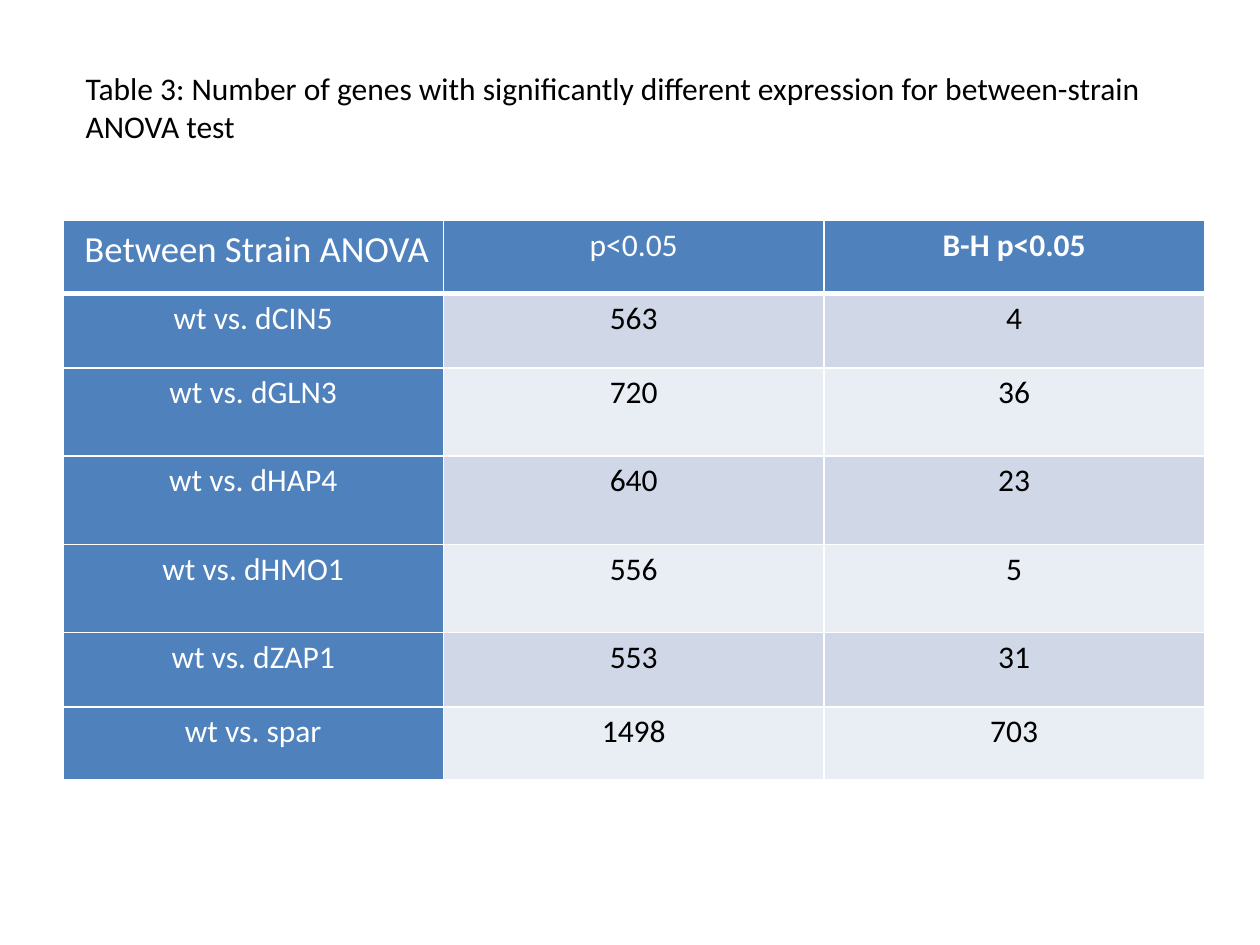
from dataclasses import dataclass

from lxml import etree
from pptx import Presentation
from pptx.dml.color import RGBColor
from pptx.enum.text import MSO_ANCHOR, MSO_AUTO_SIZE, PP_ALIGN
from pptx.oxml.ns import qn
from pptx.util import Inches, Pt

LEFT, CENTER = PP_ALIGN.LEFT, PP_ALIGN.CENTER
TOP = MSO_ANCHOR.TOP
GROW = MSO_AUTO_SIZE.SHAPE_TO_FIT_TEXT
TITLE_ONLY = 5


@dataclass(frozen=True)
class Theme:
    font: str = "Calibri"
    text: str = "000000"
    inverse: str = "FFFFFF"
    accent: str = "4F81BD"
    bands: tuple = ("D0D8E8", "E9EDF4")
    size: int = 18
    corner_size: int = 21
    border: int = 1
    header_border: int = 3


THEME = Theme()
TITLE = ("Table 3: Number of genes with significantly different expression "
         "for between-strain ANOVA test")
HEADERS = ("Between Strain ANOVA", "p<0.05", "B-H p<0.05")
GENE_COUNTS = (
    ("wt vs. dCIN5", 563, 4),
    ("wt vs. dGLN3", 720, 36),
    ("wt vs. dHAP4", 640, 23),
    ("wt vs. dHMO1", 556, 5),
    ("wt vs. dZAP1", 553, 31),
    ("wt vs. spar", 1498, 703),
)
ROW_HEIGHTS = (0.58, 0.59, 0.7, 0.7, 0.7, 0.59, 0.58)
COL_WIDTH = 3.02


def add_run(p, text, color, size=THEME.size, bold=False):
    r = p.add_run()
    r.text = text
    r.font.name = THEME.font
    r.font.size = Pt(size)
    r.font.bold = bold
    r.font.color.rgb = RGBColor.from_string(color)


def add_title(s):
    sp = s.shapes.title
    sp.left, sp.top = Inches(0.58), Inches(0.5)
    sp.width, sp.height = Inches(8.75), Inches(0.71)
    tf = sp.text_frame
    tf.word_wrap = True
    tf.auto_size = GROW
    tf.vertical_anchor = TOP
    p = tf.paragraphs[0]
    p.alignment = LEFT
    add_run(p, TITLE, THEME.text)


def set_borders(cell, bottom):
    tcPr = cell._tc.get_or_add_tcPr()
    widths = {"a:lnL": THEME.border, "a:lnR": THEME.border,
              "a:lnT": THEME.border, "a:lnB": bottom}
    for tag, width in widths.items():
        ln = etree.SubElement(tcPr, qn(tag), w=str(Pt(width)))
        fill = etree.SubElement(ln, qn("a:solidFill"))
        etree.SubElement(fill, qn("a:srgbClr"), val=THEME.inverse)


def format_cell(cell, fill, bottom):
    set_borders(cell, bottom)
    cell.fill.solid()
    cell.fill.fore_color.rgb = RGBColor.from_string(fill)
    cell.margin_left = cell.margin_right = Inches(0.07)
    cell.margin_top = cell.margin_bottom = 0
    cell.vertical_anchor = TOP
    p = cell.text_frame.paragraphs[0]
    p.alignment = CENTER
    p.line_spacing = 1.15
    return p


def add_gene_table(s):
    rows = (HEADERS,) + GENE_COUNTS
    table = s.shapes.add_table(
        len(rows), len(HEADERS), Inches(0.5), Inches(1.75),
        Inches(COL_WIDTH * len(HEADERS)), Inches(sum(ROW_HEIGHTS))).table
    for col in table.columns:
        col.width = Inches(COL_WIDTH)
    for i, (values, height) in enumerate(zip(rows, ROW_HEIGHTS)):
        table.rows[i].height = Inches(height)
        for j, value in enumerate(values):
            header = i == 0
            label = header or j == 0
            p = format_cell(
                table.cell(i, j),
                THEME.accent if label else THEME.bands[(i - 1) % 2],
                THEME.header_border if header else THEME.border)
            corner = header and j == 0
            if corner:
                add_run(p, " ", THEME.text)
            add_run(p, str(value), THEME.inverse if label else THEME.text,
                    THEME.corner_size if corner else THEME.size,
                    bold=header and j == len(HEADERS) - 1)


def main():
    prs = Presentation()
    prs.slide_width, prs.slide_height = Inches(10), Inches(7.5)
    s = prs.slides.add_slide(prs.slide_layouts[TITLE_ONLY])
    add_title(s)
    add_gene_table(s)
    prs.save("out.pptx")


if __name__ == "__main__":
    main()
